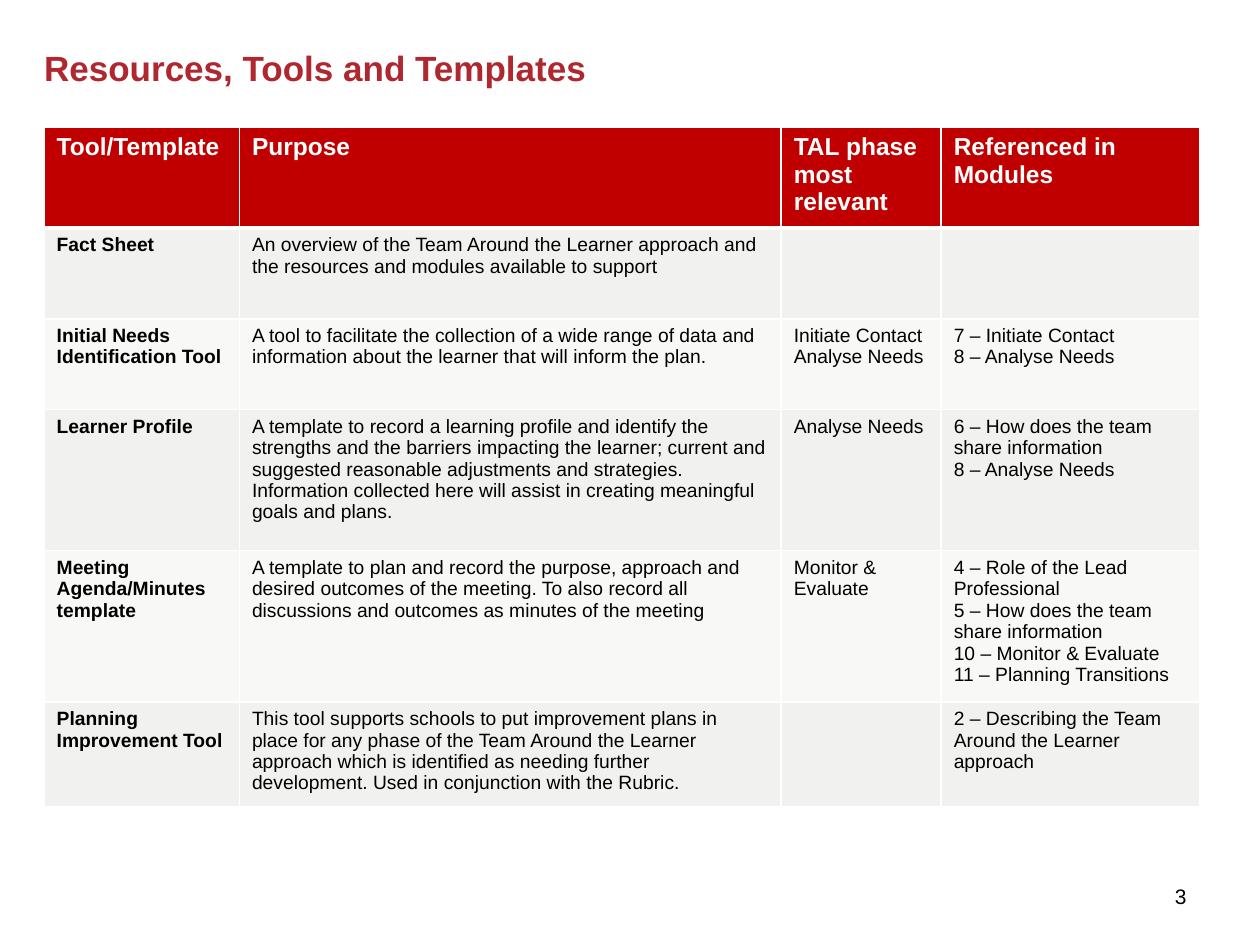
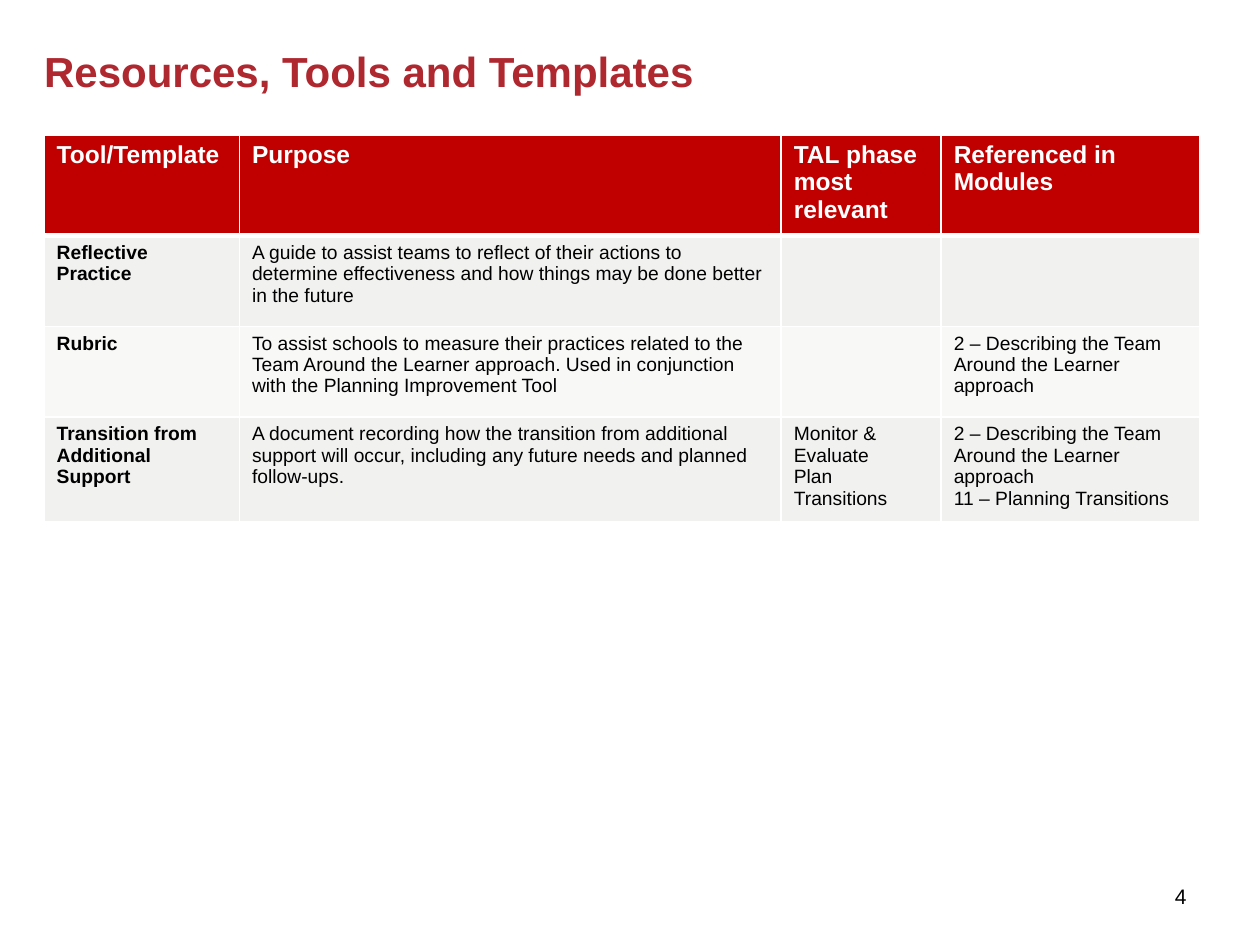
import pptx
import pptx.dml.color
import pptx.enum.text
import pptx.oxml
import pptx.oxml.ns
import pptx.util

Inches = pptx.util.Inches
Pt = pptx.util.Pt
PP_ALIGN = pptx.enum.text.PP_ALIGN
MSO_ANCHOR = pptx.enum.text.MSO_ANCHOR

COLORS = {
    "title": "AF272F",
    "header": "C00000",
    "band_dark": "F1F1F0",
    "band_light": "F8F8F7",
    "white": "FFFFFF",
    "black": "000000",
}
FONT = "Arial"
LEFT = 0.35
COLUMN_WIDTHS = [1.55, 4.3, 1.27, 2.05]
HEADER_HEIGHT = 0.74
HEADERS = ["Tool/Template", "Purpose", "TAL phase most relevant",
           "Referenced in Modules"]
TITLE = "Resources, Tools and Templates"
TEAM_MODULE = "2 – Describing the Team Around the Learner approach"
SHARING = "How does the team share information"

# Each row: height, tool, purpose, phases, modules
PLANNING_TOOLS = [
    (0.72, "Fact Sheet",
     "An overview of the Team Around the Learner approach and the resources "
     "and modules available to support", [], []),
    (0.72, "Initial Needs Identification Tool",
     "A tool to facilitate the collection of a wide range of data and "
     "information about the learner that will inform the plan.",
     ["Initiate Contact", "Analyse Needs"],
     ["7 – Initiate Contact", "8 – Analyse Needs"]),
    (1.12, "Learner Profile",
     "A template to record a learning profile and identify the strengths and "
     "the barriers impacting the learner; current and suggested reasonable "
     "adjustments and strategies. Information collected here will assist in "
     "creating meaningful goals and plans.",
     ["Analyse Needs"], [f"6 – {SHARING}", "8 – Analyse Needs"]),
    (1.12, "Meeting Agenda/Minutes template",
     "A template to plan and record the purpose, approach and desired "
     "outcomes of the meeting. To also record all discussions and outcomes "
     "as minutes of the meeting",
     ["Monitor & Evaluate"],
     ["4 – Role of the Lead Professional", f"5 – {SHARING}",
      "10 – Monitor & Evaluate", "11 – Planning Transitions"]),
    (0.78, "Planning Improvement Tool",
     "This tool supports schools to put improvement plans in place for any "
     "phase of the Team Around the Learner approach which is identified as "
     "needing further development. Used in conjunction with the Rubric.",
     [], [TEAM_MODULE]),
]
REVIEW_TOOLS = [
    (0.72, "Reflective Practice",
     "A guide to assist teams to reflect of their actions to determine "
     "effectiveness and how things may be done better in the future", [], []),
    (0.72, "Rubric",
     "To assist schools to measure their practices related to the Team Around "
     "the Learner approach. Used in conjunction with the Planning "
     "Improvement Tool", [], [TEAM_MODULE]),
    (0.78, "Transition from Additional Support",
     "A document recording how the transition from additional support will "
     "occur, including any future needs and planned follow-ups.",
     ["Monitor & Evaluate", "Plan Transitions"],
     [TEAM_MODULE, "11 – Planning Transitions"]),
]


class Deck:
    def __init__(self):
        self.prs = pptx.Presentation()
        self.prs.slide_width = Inches(10)
        self.prs.slide_height = Inches(7.5)
        self.s = None

    def rgb(self, color):
        return pptx.dml.color.RGBColor.from_string(COLORS[color])

    def add_text(self, p, text, size, color, bold=False):
        r = p.add_run()
        r.text = text
        r.font.name = FONT
        r.font.size = Pt(size)
        r.font.bold = bold
        r.font.color.rgb = self.rgb(color)

    def add_slide(self, number):
        self.s = self.prs.slides.add_slide(self.prs.slide_layouts[5])
        sp = self.s.shapes.add_textbox(Inches(9.13), Inches(6.91),
                                       Inches(0.48), Inches(0.4))
        tf = sp.text_frame
        tf.word_wrap = True
        tf.vertical_anchor = MSO_ANCHOR.MIDDLE
        p = tf.paragraphs[0]
        p.alignment = PP_ALIGN.CENTER
        self.add_text(p, str(number), 12, "black")

    def add_title(self, text, height, size):
        sp = self.s.shapes.title
        sp.left, sp.top = Inches(LEFT), Inches(0.41)
        sp.width, sp.height = Inches(9.25), Inches(height)
        tf = sp.text_frame
        tf.margin_left = tf.margin_right = tf.margin_top = tf.margin_bottom = 0
        tf.vertical_anchor = MSO_ANCHOR.TOP
        tf.auto_size = pptx.enum.text.MSO_AUTO_SIZE.NONE
        p = tf.paragraphs[0]
        p.alignment = PP_ALIGN.LEFT
        p.line_spacing = 0.9
        self.add_text(p, text, size, "title", bold=True)

    def add_borders(self, cell, top, bottom):
        tcPr = cell._tc.get_or_add_tcPr()
        for side, width in zip("LRTB", (1, 1, top, bottom)):
            tcPr.append(pptx.oxml.parse_xml(
                f'<a:ln{side} {pptx.oxml.ns.nsdecls("a")} w="{Pt(width)}">'
                f'<a:solidFill><a:srgbClr val="{COLORS["white"]}"/></a:solidFill>'
                f'</a:ln{side}>'))

    def fill_cell(self, cell, lines, fill, size, color, bold, top=1, bottom=1):
        self.add_borders(cell, top, bottom)
        cell.fill.solid()
        cell.fill.fore_color.rgb = self.rgb(fill)
        tf = cell.text_frame
        for i, line in enumerate(lines):
            p = tf.add_paragraph() if i else tf.paragraphs[0]
            self.add_text(p, line, size, color, bold)

    def add_tool_table(self, top, tools):
        heights = [HEADER_HEIGHT] + [tool[0] for tool in tools]
        table = self.s.shapes.add_table(
            len(heights), len(HEADERS), Inches(LEFT), Inches(top),
            Inches(sum(COLUMN_WIDTHS)), Inches(sum(heights))).table
        for column, width in zip(table.columns, COLUMN_WIDTHS):
            column.width = Inches(width)
        for row, height in zip(table.rows, heights):
            row.height = Inches(height)
        for c, header in enumerate(HEADERS):
            self.fill_cell(table.cell(0, c), [header], "header", 14, "white",
                           True, bottom=3)
        for r, (_, tool, purpose, phases, modules) in enumerate(tools, 1):
            band = "band_dark" if r % 2 else "band_light"
            for c, lines in enumerate(([tool], [purpose], phases, modules)):
                self.fill_cell(table.cell(r, c), lines, band, 11, "black",
                               c == 0, top=3 if r == 1 else 1)


def main():
    deck = Deck()
    deck.add_slide(3)
    deck.add_title(TITLE, 0.86, 20)
    deck.add_tool_table(1.01, PLANNING_TOOLS)
    deck.add_slide(4)
    deck.add_title(TITLE, 0.66, 24)
    deck.add_tool_table(1.07, REVIEW_TOOLS)
    deck.prs.save("out.pptx")


if __name__ == "__main__":
    main()
